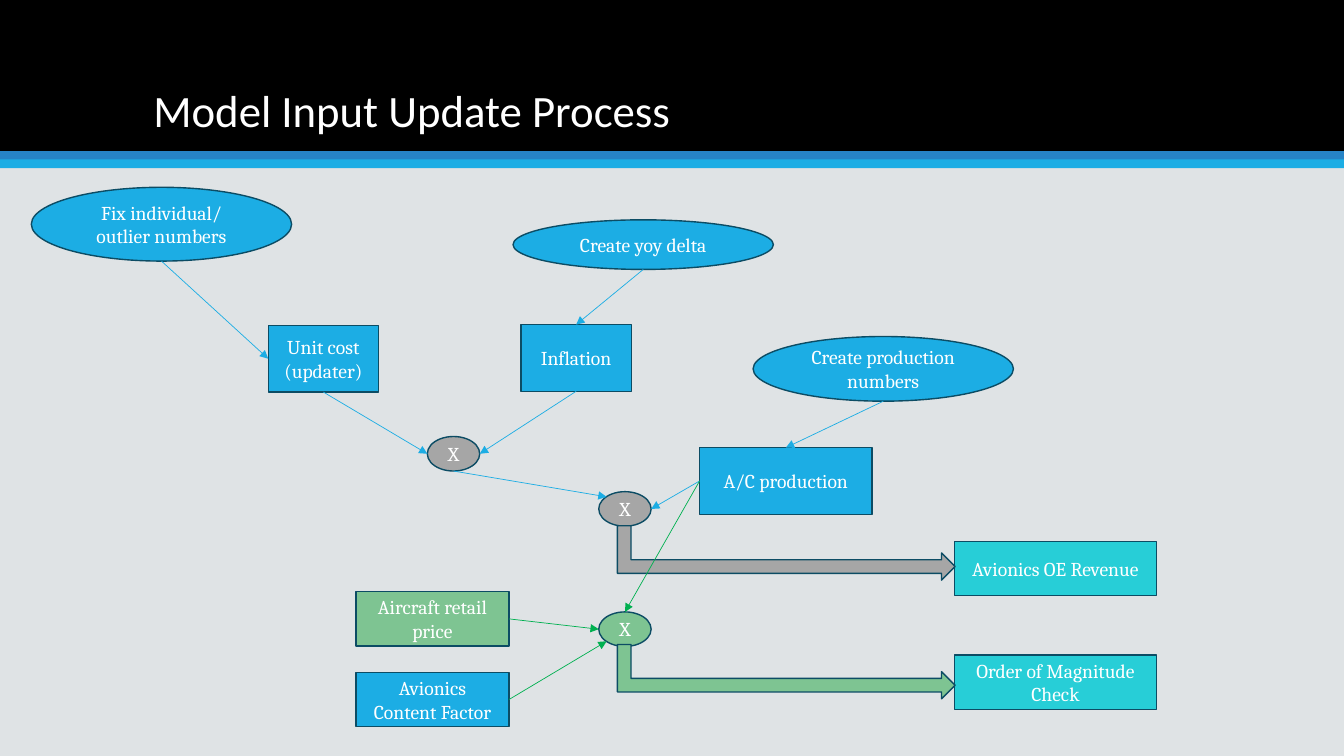
"""Build the model input update process slide."""
from pptx import Presentation
from pptx.dml.color import RGBColor
from pptx.enum.shapes import MSO_CONNECTOR, MSO_SHAPE
from pptx.enum.text import MSO_ANCHOR, PP_ALIGN
from pptx.oxml.ns import qn
from pptx.util import Cm, Pt
from lxml.etree import SubElement

WIDTH, HEIGHT = 33.87, 19.05
COLORS = {
    "back": "DFE3E5", "black": "000000", "white": "FFFFFF", "edge": "0C4C64",
    "blue": "1CADE4", "navy": "2683C6", "gray": "A6A6A6", "teal": "27CED7",
    "mint": "7EC492", "green": "00B050",
}
TITLE = "Model Input Update Process"
BANDS = [("black", 0, 3.81), ("navy", 3.81, 0.22), ("blue", 4.02, 0.22)]
SIZES = {
    "input": (MSO_SHAPE.RECTANGLE, 2.78, 1.68),
    "volume": (MSO_SHAPE.RECTANGLE, 4.35, 1.68),
    "factor": (MSO_SHAPE.RECTANGLE, 3.86, 1.37),
    "result": (MSO_SHAPE.RECTANGLE, 5.08, 1.37),
    "tall": (MSO_SHAPE.OVAL, 6.56, 1.86),
    "flat": (MSO_SHAPE.OVAL, 6.56, 1.25),
    "mid": (MSO_SHAPE.OVAL, 6.56, 1.63),
    "times": (MSO_SHAPE.OVAL, 1.32, 0.87),
}
NODES = {
    "cost": ("Unit cost\n(updater)", "input", "blue", 6.76, 8.2),
    "rise": ("Inflation", "input", "blue", 13.13, 8.18),
    "craft": ("A/C production", "volume", "blue", 17.63, 11.28),
    "fix": ("Fix individual/ outlier numbers", "tall", "blue", 0.79, 4.72),
    "delta": ("Create yoy delta", "flat", "blue", 12.93, 5.54),
    "count": ("Create production numbers", "mid", "blue", 18.98, 8.48),
    "first": ("X", "times", "gray", 10.77, 11),
    "second": ("X", "times", "gray", 15.09, 12.39),
    "third": ("X", "times", "mint", 15.09, 15.42),
    "price": ("Aircraft retail price", "factor", "mint", 8.97, 14.91),
    "share": ("Avionics Content Factor", "factor", "blue", 8.97, 16.94),
    "sales": ("Avionics OE Revenue", "result", "teal", 24.06, 13.64),
    "check": ("Order of Magnitude Check", "result", "teal", 24.06, 16.51),
}
LINKS = [
    ("fix", "bottom", "cost", "left", "blue"),
    ("delta", "bottom", "rise", "top", "blue"),
    ("count", "bottom", "craft", "top", "blue"),
    ("cost", "bottom", "first", "left", "blue"),
    ("rise", "bottom", "first", "right", "blue"),
    ("first", "bottom", "second", "upper", "blue"),
    ("craft", "left", "second", "right", "blue"),
    ("price", "right", "third", "left", "green"),
    ("share", "right", "third", "lower", "green"),
    ("craft", "left", "third", "top", "green"),
]
BENDS = [("gray", 19.13, 9.68), ("mint", 19.13, 12.67)]
SITES = {
    "top": (0.5, 0), "left": (0, 0.5), "bottom": (0.5, 1), "right": (1, 0.5),
    "upper": (0.15, 0.15), "lower": (0.15, 0.85),
}
JOINS = ["top", "left", "bottom", "right"]


def tint(name):
    return RGBColor.from_string(COLORS[name])


def draw(slide, kind, color, box, edge=True):
    shape = slide.shapes.add_shape(kind, *map(Cm, box))
    shape.shadow.inherit = False
    shape.fill.solid()
    shape.fill.fore_color.rgb = tint(color)
    if edge:
        shape.line.color.rgb = tint("edge")
        shape.line.width = Pt(1)
    else:
        shape.line.fill.background()
    return shape


def label(shape, text):
    frame = shape.text_frame
    frame.text = text
    frame.word_wrap = True
    frame.vertical_anchor = MSO_ANCHOR.MIDDLE
    for para in frame.paragraphs:
        para.alignment = PP_ALIGN.CENTER
        para.font.name = "Cambria"
        para.font.size = Pt(14)
        para.font.color.rgb = tint("white")


def point(shape, side):
    across, down = SITES[side]
    return (int(shape.left + across * shape.width),
            int(shape.top + down * shape.height))


def link(slide, start, out, end, into, color):
    line = slide.shapes.add_connector(
        MSO_CONNECTOR.STRAIGHT, *point(start, out), *point(end, into))
    if start.auto_shape_type == MSO_SHAPE.RECTANGLE:
        line.begin_connect(start, JOINS.index(out))
    if end.auto_shape_type == MSO_SHAPE.RECTANGLE:
        line.end_connect(end, JOINS.index(into))
    line.line.color.rgb = tint(color)
    line.line.width = Pt(0.5)
    SubElement(line.line._get_or_add_ln(), qn("a:tailEnd"), type="triangle")
    SubElement(line._element.spPr, qn("a:effectLst"))


def head(slide):
    title = slide.shapes.title
    title.left, title.top = Cm(3.61), Cm(0.71)
    title.width, title.height = Cm(26.67), Cm(2.87)
    title.text_frame.text = TITLE
    title.text_frame.vertical_anchor = MSO_ANCHOR.BOTTOM
    para = title.text_frame.paragraphs[0]
    para.alignment = PP_ALIGN.LEFT
    para.line_spacing = 0.9
    para.font.name = "Calibri"
    para.font.size = Pt(32)
    para.font.color.rgb = tint("white")
    slide.shapes._spTree.append(title._element)


def main():
    deck = Presentation()
    deck.slide_width, deck.slide_height = Cm(WIDTH), Cm(HEIGHT)
    slide = deck.slides.add_slide(deck.slide_layouts[5])
    slide.background.fill.solid()
    slide.background.fill.fore_color.rgb = tint("back")
    for color, top, height in BANDS:
        draw(slide, MSO_SHAPE.RECTANGLE, color, (0, top, WIDTH, height), False)
    head(slide)
    nodes = {}
    for name, (text, size, color, left, top) in NODES.items():
        kind, width, height = SIZES[size]
        nodes[name] = draw(slide, kind, color, (left, top, width, height))
        label(nodes[name], text)
    for color, left, top in BENDS:
        bend = draw(slide, MSO_SHAPE.BENT_UP_ARROW, color, (left, top, 1.37, 8.51))
        bend.rotation = 90
    for start, out, end, into, color in LINKS:
        link(slide, nodes[start], out, nodes[end], into, color)
    deck.save("out.pptx")


if __name__ == "__main__":
    main()
